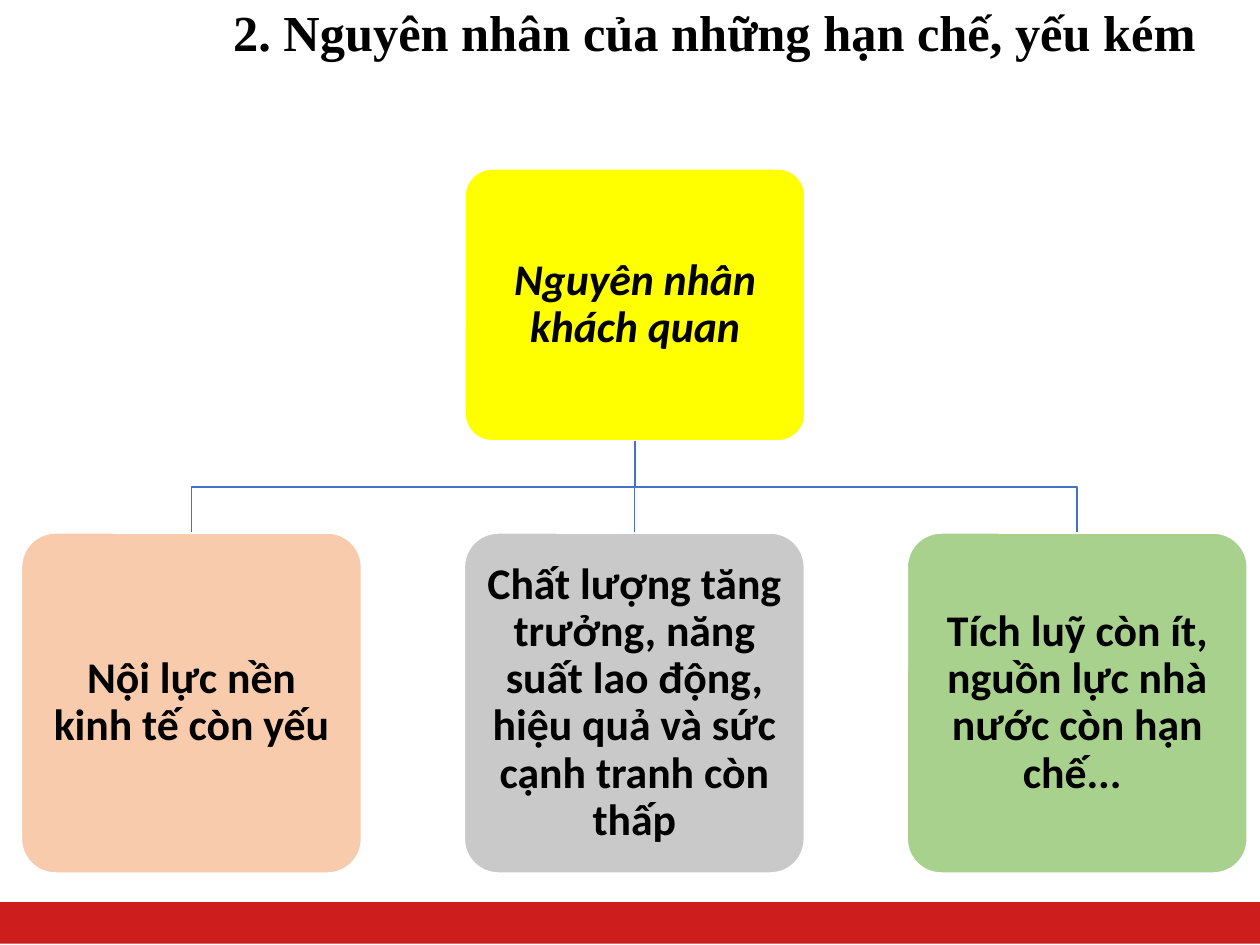
from dataclasses import dataclass

import pptx
import pptx.dml.color
import pptx.enum.shapes
import pptx.enum.text
import pptx.util

Inches = pptx.util.Inches
Pt = pptx.util.Pt
SHAPES = pptx.enum.shapes.MSO_SHAPE
ALIGN = pptx.enum.text.PP_ALIGN
ANCHOR = pptx.enum.text.MSO_ANCHOR


@dataclass(frozen=True)
class Theme:
    title_font: str = "Times New Roman"
    body_font: str = "Calibri"
    title_size: float = 28.8
    node_size: float = 25
    text: str = "000000"
    outline: str = "FFFFFF"
    branch: str = "4472C4"
    band: str = "CD1D1D"
    cause: str = "FFFF00"
    factors: tuple = ("F8CBAD", "C9C9C9", "A9D18E")


THEME = Theme()
SLIDE_WIDTH = 10
SLIDE_HEIGHT = 7.5
BAND_TOP, BAND_HEIGHT = 7.16, 0.33
NODE_WIDTH = 2.7
FIRST_COLUMN, COLUMN_STEP = 0.17, 3.515
CAUSE_LEFT, CAUSE_TOP, CAUSE_HEIGHT = 3.69, 1.34, 2.16
FACTOR_TOP, FACTOR_HEIGHT = 4.23, 2.7

CAUSE = "Nguyên nhân khách quan"
FACTORS = (
    "Nội lực nền kinh tế còn yếu",
    "Chất lượng tăng trưởng, năng suất lao động, hiệu quả và sức cạnh tranh còn thấp",
    "Tích luỹ còn ít, nguồn lực nhà nước còn hạn chế... ",
)


def rgb(value):
    return pptx.dml.color.RGBColor.from_string(value)


def style_paragraph(paragraph, font_name, size, alignment, italic=False):
    paragraph.alignment = alignment
    paragraph.line_spacing = 0.9
    font = paragraph.font
    font.name = font_name
    font.size = Pt(size)
    font.bold = True
    font.italic = italic
    font.color.rgb = rgb(THEME.text)


def add_band(slide):
    band = slide.shapes.add_shape(
        SHAPES.RECTANGLE, 0, Inches(BAND_TOP),
        Inches(SLIDE_WIDTH), Inches(BAND_HEIGHT))
    band.shadow.inherit = False
    band.fill.solid()
    band.fill.fore_color.rgb = rgb(THEME.band)
    band.line.fill.background()


def set_title(slide, wording):
    title = slide.shapes.title
    title.left, title.top = Inches(1.75), Inches(0.06)
    title.width, title.height = Inches(9), Inches(0.87)
    frame = title.text_frame
    frame.text = wording
    frame.auto_size = pptx.enum.text.MSO_AUTO_SIZE.NONE
    frame.vertical_anchor = ANCHOR.TOP
    frame.margin_top = 0
    style_paragraph(frame.paragraphs[0], THEME.title_font, THEME.title_size, ALIGN.LEFT)


def add_node(slide, left, top, height, wording, color, italic=False):
    node = slide.shapes.add_shape(
        SHAPES.ROUNDED_RECTANGLE, Inches(left), Inches(top),
        Inches(NODE_WIDTH), Inches(height))
    node.adjustments[0] = 0.1
    node.shadow.inherit = False
    node.fill.solid()
    node.fill.fore_color.rgb = rgb(color)
    node.line.color.rgb = rgb(THEME.outline)
    node.line.width = Pt(1)
    frame = node.text_frame
    frame.word_wrap = True
    frame.vertical_anchor = ANCHOR.MIDDLE
    frame.margin_left = frame.margin_right = Inches(0.1)
    frame.margin_top = frame.margin_bottom = Inches(0.1)
    frame.text = wording
    style_paragraph(frame.paragraphs[0], THEME.body_font, THEME.node_size,
                    ALIGN.CENTER, italic)


def add_branch(slide, factor_left):
    start = Inches(CAUSE_LEFT + NODE_WIDTH / 2)
    end = Inches(factor_left + NODE_WIDTH / 2)
    top = Inches(CAUSE_TOP + CAUSE_HEIGHT)
    bottom = Inches(FACTOR_TOP)
    middle = (top + bottom) // 2
    builder = slide.shapes.build_freeform(start, top)
    turns = [(start, middle), (end, middle), (end, bottom)]
    builder.add_line_segments(turns, close=False)
    branch = builder.convert_to_shape()
    branch.shadow.inherit = False
    branch.fill.background()
    branch.line.color.rgb = rgb(THEME.branch)
    branch.line.width = Pt(1)


def main():
    deck = pptx.Presentation()
    deck.slide_width = Inches(SLIDE_WIDTH)
    deck.slide_height = Inches(SLIDE_HEIGHT)
    slide = deck.slides.add_slide(deck.slide_layouts.get_by_name("Title Only"))

    add_band(slide)
    set_title(slide, "2. Nguyên nhân của những hạn chế, yếu kém")
    add_node(slide, CAUSE_LEFT, CAUSE_TOP, CAUSE_HEIGHT, CAUSE, THEME.cause, italic=True)
    for column, (factor, color) in enumerate(zip(FACTORS, THEME.factors)):
        left = FIRST_COLUMN + column * COLUMN_STEP
        add_branch(slide, left)
        add_node(slide, left, FACTOR_TOP, FACTOR_HEIGHT, factor, color)

    deck.save("out.pptx")


if __name__ == "__main__":
    main()
